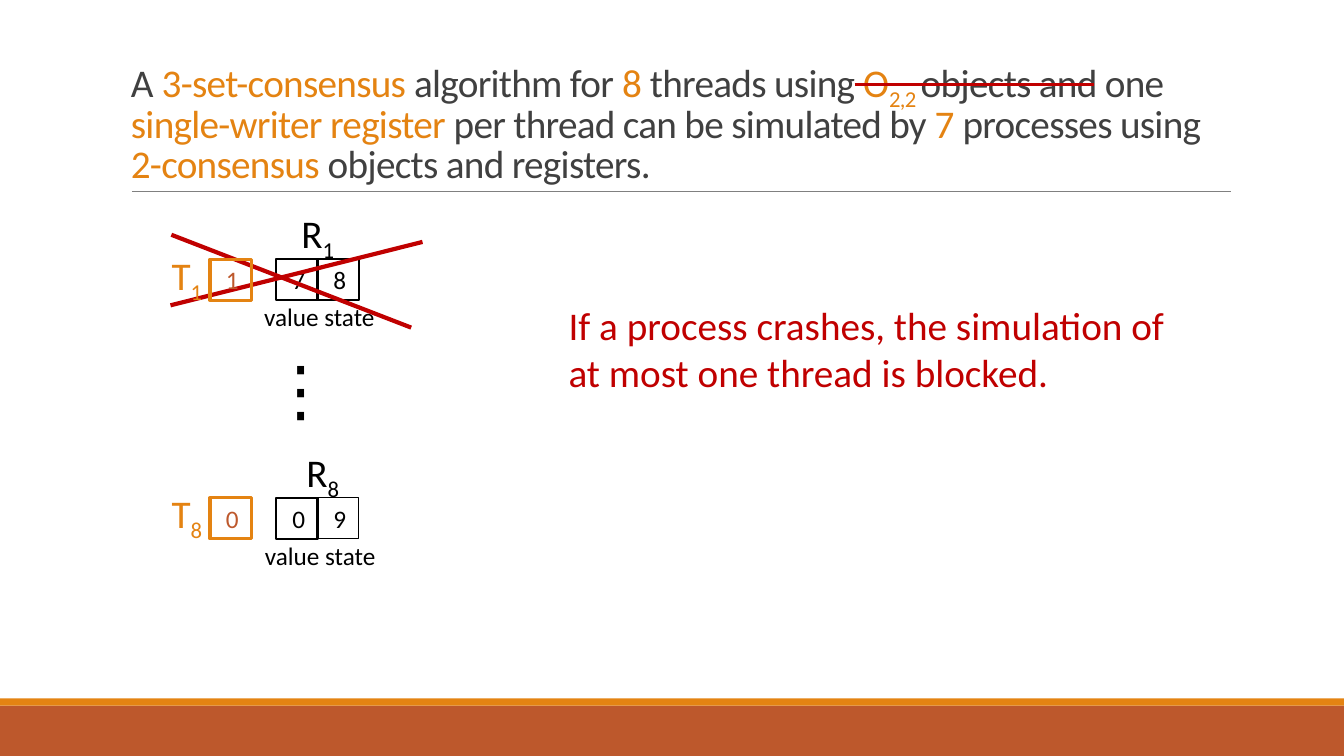
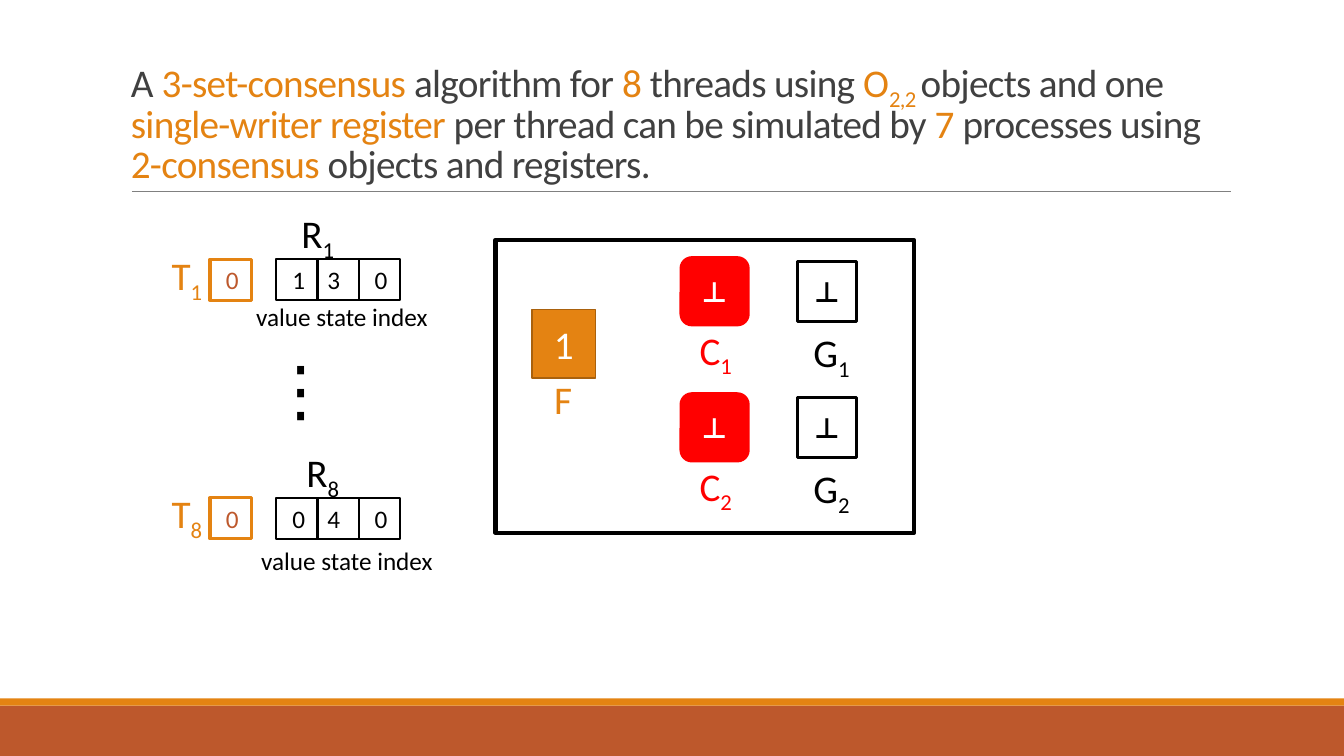
from typing import NamedTuple, Optional

from lxml.etree import SubElement
from pptx import Presentation
from pptx.dml.color import RGBColor
from pptx.enum.shapes import MSO_CONNECTOR as Connector, MSO_SHAPE as Preset
from pptx.enum.text import MSO_ANCHOR as Anchor, PP_ALIGN as Align
from pptx.oxml.ns import qn
from pptx.util import Inches, Pt

COLUMNS, ROWS = 32, 18
UNIT = Inches(5 / 12)
COLOURS = {
    "band": "BD582C",
    "accent": "E48312",
    "accent_edge": "A9610D",
    "title": "404040",
    "rule": "808080",
    "ink": "000000",
    "paper": "FFFFFF",
    "alert": "C00000",
    "counter": "FF0000",
}
FONT = "Calibri"
INSET = 0.24
CELL = 0.98
FIRST_ROW, LAST_ROW = 6.17, 11.85


class Span(NamedTuple):
    text: str
    colour: Optional[str] = None
    subscript: bool = False


TITLE = [
    Span("A "), Span("3-set-consensus", "accent"), Span(" algorithm for "),
    Span("8 ", "accent"), Span("threads using "), Span("O", "accent"),
    Span("2,2 ", "accent", True), Span("objects and one "),
    Span("single-writer register ", "accent"),
    Span("per thread can be simulated by "), Span("7", "accent"),
    Span(" processes using "), Span("2-consensus", "accent"),
    Span(" objects and registers."),
]


def grid(*units):
    return [round(unit * UNIT) for unit in units]


def rgb(name):
    return RGBColor.from_string(COLOURS[name])


class Deck:
    def __init__(self):
        self.presentation = Presentation()
        self.presentation.slide_width, self.presentation.slide_height = grid(COLUMNS, ROWS)
        self.slide = None

    def add_slide(self):
        self.slide = self.presentation.slides.add_slide(self.presentation.slide_layouts[6])
        self.box(0, 16.8, COLUMNS, 1.2, fill="band")
        self.box(0, 16.63, COLUMNS, 0.17, fill="accent")
        self.line(3.14, 4.56, 29.3, 4.56, "rule", 0.5)
        paragraph = self.text(TITLE, 2.88, 0.74, 26, 3.82, colour="title", anchor=Anchor.BOTTOM)
        paragraph.line_spacing = 0.85
        paragraph._p.get_or_add_pPr().get_or_add_defRPr().set("spc", "-50")

    def set_text(self, shape, spans, size, colour, anchor, inset=INSET, align=Align.LEFT, bold=False):
        frame = shape.text_frame
        frame.word_wrap = True
        frame.vertical_anchor = anchor
        frame.margin_left, frame.margin_right = grid(inset, 0)
        paragraph = frame.paragraphs[0]
        paragraph.alignment = align
        paragraph.font.name = FONT
        paragraph.font.size = Pt(size)
        paragraph.font.bold = bold
        paragraph.font.color.rgb = rgb(colour)
        for span in spans:
            run = paragraph.add_run()
            run.text = span.text
            if span.colour:
                run.font.color.rgb = rgb(span.colour)
            if span.subscript:
                run._r.get_or_add_rPr().set("baseline", "-25000")
        return paragraph

    def text(self, spans, left, top, width, height, size=28, colour="ink", anchor=Anchor.TOP):
        shape = self.slide.shapes.add_textbox(*grid(left, top, width, height))
        return self.set_text(shape, spans, size, colour, anchor)

    def label(self, letter, number, left, top, colour="ink"):
        spans = [Span(letter), Span(number, subscript=True)]
        self.text(spans, left, top, 1.63, 1.37, colour=colour)

    def box(self, left, top, width, height, fill=None, edge=None, weight=1.5, preset=Preset.RECTANGLE):
        shape = self.slide.shapes.add_shape(preset, *grid(left, top, width, height))
        shape.shadow.inherit = False
        if fill:
            shape.fill.solid()
            shape.fill.fore_color.rgb = rgb(fill)
        else:
            shape.fill.background()
        if edge:
            shape.line.color.rgb = rgb(edge)
            shape.line.width = Pt(weight)
        else:
            shape.line.fill.background()
        return shape

    def symbol_box(self, symbol, left, top, width, height, size, colour, bold=False, **style):
        shape = self.box(left, top, width, height, **style)
        self.set_text(shape, [Span(symbol)], size, colour, Anchor.MIDDLE, 0, Align.CENTER, bold)

    def cell(self, value, left, top, edge="ink", weight=1.5, colour="ink", inset=0.38):
        shape = self.box(left, top, CELL, CELL, edge=edge, weight=weight)
        self.set_text(shape, [Span(value)], 18, colour, Anchor.MIDDLE, inset)

    def line(self, left, top, right, bottom, colour, weight):
        line = self.slide.shapes.add_connector(
            Connector.STRAIGHT, *grid(left, top, right, bottom))
        line.line.color.rgb = rgb(colour)
        line.line.width = Pt(weight)
        SubElement(line._element.spPr, qn("a:effectLst"))

    def register(self, number, values, top, label_left, caption, caption_left, caption_drop=0.89,
                 state_inset=0.38, state_weight=1.5):
        for index, value in enumerate(values):
            style = {"inset": state_inset, "weight": state_weight} if index == 1 else {}
            self.cell(value, 6.58 + index * CELL, top, **style)
        self.label("R", number, label_left, top - 1.3)
        self.text([Span(caption)], caption_left, top + caption_drop, 4.61, 0.96, size=18)

    def thread(self, number, value, top):
        self.cell(value, 5, top, edge="accent", weight=2.25, colour="band")
        self.label("T", number, 3.85, top - 0.31, colour="accent")

    def ellipsis(self):
        self.text([Span("⋮")], 6.14, 8.16, 0.91, 2.18, size=48)


def crash_slide(deck):
    deck.add_slide()
    deck.line(20.35, 2.02, 26.04, 2.02, "alert", 2.25)
    deck.register("1", "78", FIRST_ROW, 6.94, "value state", 6.05)
    deck.register("8", "09", LAST_ROW, 7.06, "value state", 6.07, state_weight=0.75)
    deck.ellipsis()
    deck.line(4.08, 5.59, 9.79, 7.8, "alert", 3)
    deck.line(4.06, 7.27, 10.06, 5.76, "alert", 3)
    message = "If a process crashes, the simulation of at most one thread is blocked."
    deck.text([Span(message)], 13.3, 7.06, 14.86, 2.5, colour="alert")
    deck.thread("1", "1", FIRST_ROW)
    deck.thread("8", "0", LAST_ROW)


def object_slide(deck):
    deck.add_slide()
    caption = "value state index"
    deck.register("1", "130", FIRST_ROW, 6.94, caption, 5.86, state_inset=INSET)
    deck.register("8", "040", LAST_ROW, 7.06, caption, 5.98, 1.01, state_inset=INSET)
    deck.ellipsis()
    deck.box(11.8, 5.71, 9.96, 6.98, edge="ink", weight=3)
    deck.symbol_box("1", 12.67, 7.37, 1.51, 1.63, 28, "paper",
                    fill="accent", edge="accent_edge", weight=1.25)
    deck.text([Span("F")], 12.96, 8.83, 1.13, 1.37, colour="accent")
    for index, number in enumerate("12"):
        top = 6.12 + index * 3.24
        deck.symbol_box("⊥", 16.2, top, 1.63, 1.63, 20, "paper", True, fill="counter",
                        edge="counter", weight=1.25, preset=Preset.ROUNDED_RECTANGLE)
        deck.label("C", number, 16.42, top + 1.52, colour="counter")
        deck.symbol_box("⊥", 18.98, top + 0.11, 1.42, 1.42, 20, "ink", True,
                        edge="ink", weight=2.25)
        deck.label("G", number, 19.13, top + 1.58)
    deck.thread("1", "0", FIRST_ROW)
    deck.thread("8", "0", LAST_ROW)


def main():
    deck = Deck()
    crash_slide(deck)
    object_slide(deck)
    deck.presentation.save("out.pptx")


if __name__ == "__main__":
    main()
